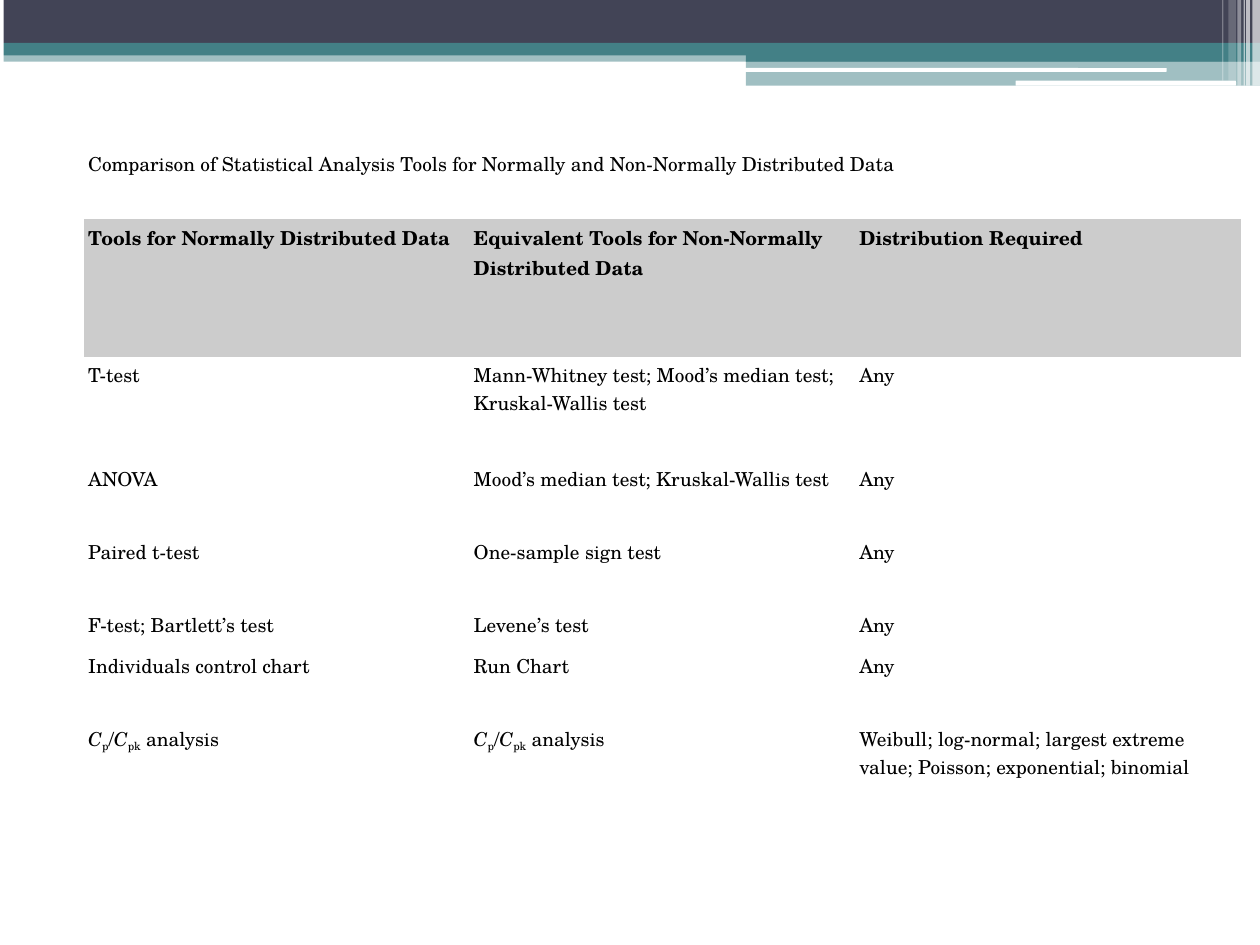
from dataclasses import dataclass

from pptx import Presentation
from pptx.dml.color import RGBColor
from pptx.enum.shapes import MSO_SHAPE
from pptx.oxml.ns import qn
from pptx.util import Inches, Pt
from lxml.etree import SubElement


@dataclass(frozen=True)
class Theme:
    font: str = "TeX Gyre Schola"
    size: int = 11
    text: str = "000000"
    header: str = "CCCCCC"
    navy: str = "424456"
    teal: str = "438086"
    white: str = "FFFFFF"
    no_table_style: str = "{2D5ABB26-0587-4C30-8999-92F81FD0307C}"


THEME = Theme()
WIDTH, HEIGHT = 10, 7.5

# Content: a cell is a string, or a list of (text, format) pieces
CAPTION = "Comparison of Statistical Analysis Tools for Normally and Non-Normally Distributed Data"
HEADINGS = (
    "Tools for Normally Distributed Data",
    "Equivalent Tools for Non-Normally Distributed Data",
    "Distribution Required",
)
CAPABILITY = [
    ("C", {"italic": True}), ("p", {"subscript": True}), ("/", {}),
    ("C", {"italic": True}), ("pk", {"subscript": True}), (" analysis", {}),
]
TOOLS = [
    ("T-test", "Mann-Whitney test; Mood’s median test; Kruskal-Wallis test", "Any"),
    ("ANOVA", "Mood’s median test; Kruskal-Wallis test", "Any"),
    ("Paired t-test", "One-sample sign test", "Any"),
    ("F-test; Bartlett’s test", "Levene’s test", "Any"),
    ("Individuals control chart", "Run Chart", "Any"),
    (CAPABILITY, CAPABILITY, "Weibull; log-normal; largest extreme value; Poisson; exponential; binomial"),
]

# Banner bands: left, top, width, height, colour, opacity in percent
BANDS = [
    (0, 0.4, WIDTH, 0.09, THEME.teal, 50),
    (0, 0, WIDTH, 0.34, THEME.navy, 100),
    (0, 0.34, WIDTH, 0.1, THEME.teal, 100),
    (5.92, 0.39, 4.08, 0.1, THEME.teal, 100),
    (5.92, 0.48, 4.08, 0.2, THEME.teal, 50),
]
ROUNDED_RULES = [(5.91, 0.54, 3.35, 0.03), (8.06, 0.64, 1.75, 0.04)]
# Banner stripes: left, width, height, opacity in percent
STRIPES = [
    (9.94, 0.06, 0.68, 65), (9.89, 0.03, 0.68, 65), (9.87, 0.01, 0.68, 60),
    (9.82, 0.03, 0.68, 40), (9.75, 0.06, 0.64, 20), (9.7, 0.01, 0.64, 30),
]

# Table grid
TABLE_LEFT, TABLE_TOP, COLUMN_WIDTH = 0.67, 1.16, 3.06
ROW_HEIGHTS = (0.58, 1.09, 0.83, 0.58, 0.58, 0.32, 0.58, 1.6)


def add_band(slide, left, top, width, height, color, opacity=100, kind=MSO_SHAPE.RECTANGLE):
    band = slide.shapes.add_shape(kind, *(Inches(v) for v in (left, top, width, height)))
    band.shadow.inherit = False
    band.line.fill.background()
    band.fill.solid()
    band.fill.fore_color.rgb = RGBColor.from_string(color)
    if opacity < 100:
        tint = band.fill._xPr.find(qn("a:solidFill"))[0]
        SubElement(tint, qn("a:alpha"), val=str(opacity * 1000))


def add_text(paragraph, text, bold=False, italic=False, subscript=False):
    run = paragraph.add_run()
    run.text = text
    font = run.font
    font.name, font.size = THEME.font, Pt(THEME.size)
    font.bold, font.italic = bold, italic
    font.color.rgb = RGBColor.from_string(THEME.text)
    if subscript:
        font._element.set("baseline", "-25000")


def fill_cell(cell, content, bold=False, fill=None):
    cell.margin_left = cell.margin_top = Inches(0.03)
    cell.margin_right = cell.margin_bottom = Inches(0.01)
    if fill:
        cell.fill.solid()
        cell.fill.fore_color.rgb = RGBColor.from_string(fill)
    else:
        cell.fill.background()
    pieces = [(content, {})] if isinstance(content, str) else content
    for text, style in pieces:
        add_text(cell.text_frame.paragraphs[0], text, bold=bold, **style)


def add_banner(slide):
    for band in BANDS:
        add_band(slide, *band)
    for rule in ROUNDED_RULES:
        add_band(slide, *rule, THEME.white, kind=MSO_SHAPE.ROUNDED_RECTANGLE)
    for left, width, height, opacity in STRIPES:
        add_band(slide, left, 0, width, height, THEME.white, opacity)


def add_comparison(slide):
    columns = len(HEADINGS)
    table = slide.shapes.add_table(
        len(ROW_HEIGHTS), columns, Inches(TABLE_LEFT), Inches(TABLE_TOP),
        Inches(COLUMN_WIDTH * columns), Inches(sum(ROW_HEIGHTS)),
    ).table
    table.first_row = table.horz_banding = False
    table._tbl.tblPr.find(qn("a:tableStyleId")).text = THEME.no_table_style
    for column in table.columns:
        column.width = Inches(COLUMN_WIDTH)
    for row, height in zip(table.rows, ROW_HEIGHTS):
        row.height = Inches(height)

    # Caption spans the first row, headings and tools follow
    table.cell(0, 0).merge(table.cell(0, columns - 1))
    fill_cell(table.cell(0, 0), CAPTION)
    for c, heading in enumerate(HEADINGS):
        fill_cell(table.cell(1, c), heading, bold=True, fill=THEME.header)
    for r, tools in enumerate(TOOLS, start=2):
        for c, content in enumerate(tools):
            fill_cell(table.cell(r, c), content)


def main():
    deck = Presentation()
    deck.slide_width, deck.slide_height = Inches(WIDTH), Inches(HEIGHT)
    slide = deck.slides.add_slide(deck.slide_layouts[6])
    add_banner(slide)
    add_comparison(slide)
    # White strip along the left edge of the banner
    add_band(slide, 0, 0, 0.03, 0.78, THEME.white)
    deck.save("out.pptx")


if __name__ == "__main__":
    main()
